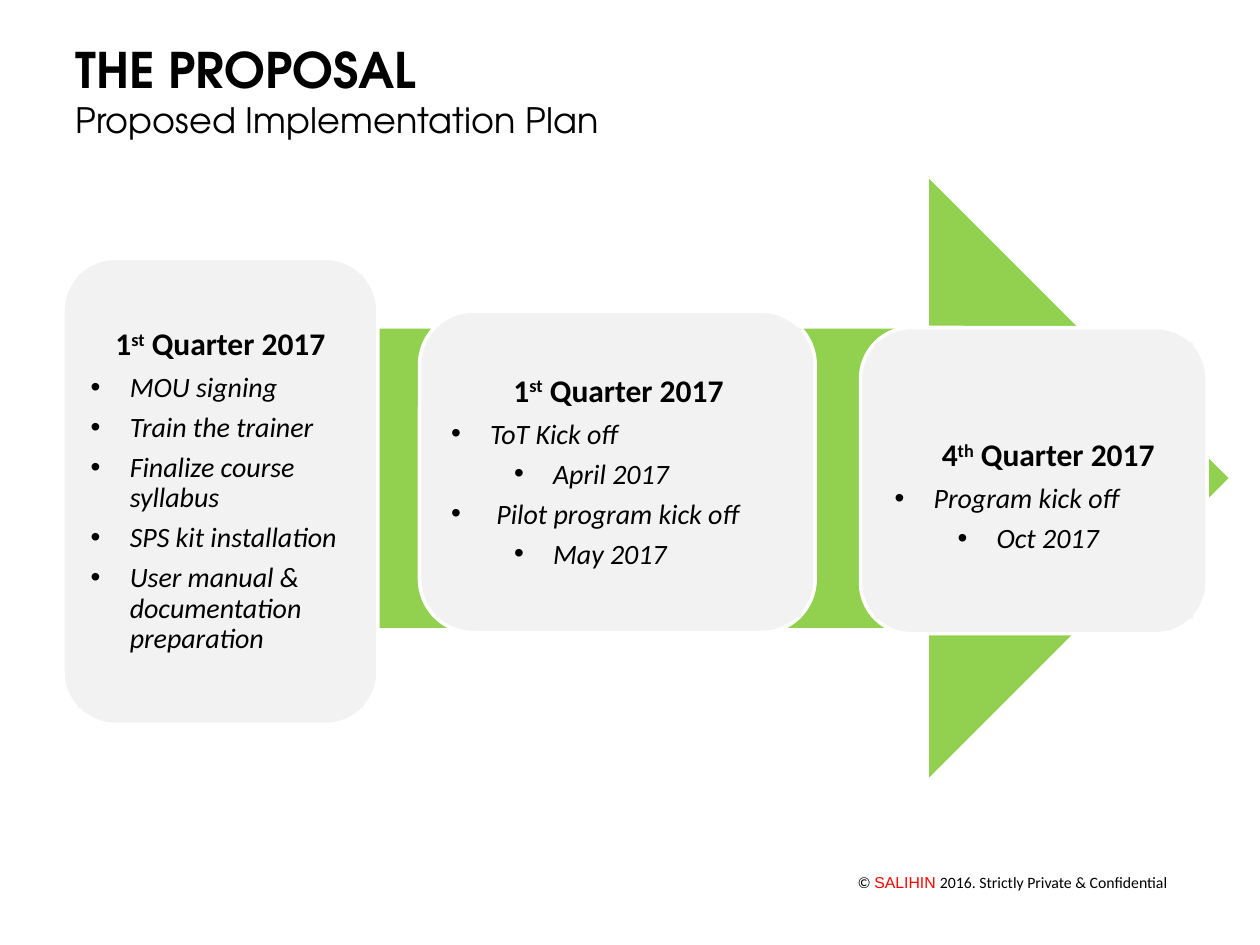
from lxml.etree import SubElement
from pptx import Presentation
from pptx.dml.color import RGBColor
from pptx.enum.shapes import MSO_SHAPE
from pptx.enum.text import MSO_ANCHOR, MSO_AUTO_SIZE, PP_ALIGN
from pptx.oxml.ns import qn
from pptx.util import Inches, Pt

BLACK = RGBColor(0x00, 0x00, 0x00)
RED = RGBColor(0xFF, 0x00, 0x00)
WHITE = RGBColor(0xFF, 0xFF, 0xFF)
GREEN = RGBColor(0x92, 0xD0, 0x50)
GREY = RGBColor(0xF2, 0xF2, 0xF2)
HEADING_FONT = "TeX Gyre Adventor"
BODY_FONT = "Calibri"


class PlanSlide:
    """Draws the elements of the implementation plan in one style."""

    def __init__(self, slide):
        self.slide = slide

    def style(self, font, size, name=BODY_FONT, bold=False, italic=False, color=BLACK):
        font.name, font.size, font.bold, font.italic = name, Pt(size), bold, italic
        font.color.rgb = color

    def placeholder(self, idx, box, anchor=MSO_ANCHOR.TOP, margin=None):
        holder = self.slide.placeholders[idx]
        holder.left, holder.top, holder.width, holder.height = map(Inches, box)
        frame = holder.text_frame
        frame.auto_size, frame.word_wrap = MSO_AUTO_SIZE.NONE, True
        frame.vertical_anchor = anchor
        if margin:
            frame.margin_left = frame.margin_right = Inches(margin)
            frame.margin_top = frame.margin_bottom = Inches(margin)
        self.slide.shapes._spTree.append(holder._element)
        return holder

    def set_bullet(self, paragraph, indent=0, hanging=0, mark=None):
        properties = paragraph._p.get_or_add_pPr()
        properties.set("marL", str(Inches(indent)))
        properties.set("indent", str(-Inches(hanging)))
        if mark:
            SubElement(properties, qn("a:buFont"), typeface="Arial")
            SubElement(properties, qn("a:buChar"), char=mark)
        else:
            SubElement(properties, qn("a:buNone"))

    def space(self, paragraph, size):
        paragraph.line_spacing = 0.9
        paragraph.space_before = Pt(0)
        paragraph.space_after = Pt(round(size * 0.35, 1))

    def heading(self, idx, box, text, size, bold=False):
        paragraph = self.placeholder(idx, box).text_frame.paragraphs[0]
        paragraph.text = text
        self.set_bullet(paragraph)
        paragraph.alignment = PP_ALIGN.LEFT
        paragraph.space_before = Pt(0)
        self.style(paragraph.font, size, HEADING_FONT, bold)

    def shape(self, preset, box, fill, line=None):
        shape = self.slide.shapes.add_shape(preset, *map(Inches, box))
        shape.shadow.inherit = False
        shape.fill.solid()
        shape.fill.fore_color.rgb = fill
        if line is None:
            shape.line.fill.background()
        else:
            shape.line.color.rgb = line
            shape.line.width = Pt(2)

    def card(self, box):
        self.shape(MSO_SHAPE.ROUNDED_RECTANGLE, box, GREY, WHITE)

    def milestones(self, idx, box, quarter, items, anchor=MSO_ANCHOR.MIDDLE,
                   margin=None, fill=None):
        holder = self.placeholder(idx, box, anchor, margin)
        if fill is not None:
            holder.fill.solid()
            holder.fill.fore_color.rgb = fill
        frame = holder.text_frame
        number, suffix = quarter
        title = frame.paragraphs[0]
        self.set_bullet(title)
        title.alignment = PP_ALIGN.CENTER
        self.space(title, 18)
        self.style(title.font, 18, bold=True)
        title.add_run().text = number
        ordinal = title.add_run()
        ordinal.text = suffix
        ordinal.font._element.set("baseline", "30000")
        title.add_run().text = " Quarter 2017"
        for level, text in items:
            item = frame.add_paragraph()
            item.text, item.level = text, level
            self.set_bullet(item, 0.31 + 0.5 * level, 0.31, "•")
            item.alignment = PP_ALIGN.LEFT
            self.space(item, 16)
            self.style(item.font, 16, italic=True)

    def footer(self, box, parts):
        frame = self.slide.shapes.add_textbox(*map(Inches, box)).text_frame
        frame.word_wrap = True
        paragraph = frame.paragraphs[0]
        paragraph.alignment = PP_ALIGN.RIGHT
        for text, name, color in parts:
            run = paragraph.add_run()
            run.text = text
            self.style(run.font, 9, name, color=color)


def main():
    presentation = Presentation()
    presentation.slide_width, presentation.slide_height = Inches(10), Inches(7.5)
    plan = PlanSlide(presentation.slides.add_slide(presentation.slide_layouts[4]))

    plan.footer((6.67, 6.88, 2.69, 0.25), [
        ("© ", BODY_FONT, BLACK),
        ("SALIHIN ", "Arial", RED),
        ("2016. Strictly Private & Confidential", BODY_FONT, BLACK),
    ])
    plan.heading(0, (0.5, 0.26, 4.42, 0.57), "THE PROPOSAL", 28, bold=True)
    plan.heading(1, (0.5, 0.73, 6.75, 0.44), "Proposed Implementation Plan", 20)
    plan.shape(MSO_SHAPE.RIGHT_ARROW, (0.54, 1.42, 9.21, 4.75), GREEN)

    plan.card((0.5, 2.05, 2.5, 3.7))
    plan.milestones(2, (0.62, 2.18, 2.26, 3.44), ("1", "st"), [
        (0, "MOU signing"),
        (0, "Train the trainer"),
        (0, "Finalize course syllabus"),
        (0, "SPS kit installation"),
        (0, "User manual & documentation preparation"),
    ], margin=0.1, fill=GREY)

    plan.card((3.33, 2.47, 3.14, 2.55))
    plan.milestones(4, (3.46, 2.6, 2.9, 2.3), ("1", "st"), [
        (0, "ToT Kick off"),
        (1, "April 2017"),
        (0, " Pilot program kick off"),
        (1, "May 2017"),
    ], margin=0.12, fill=GREY)

    plan.card((6.83, 2.6, 2.75, 2.43))
    plan.shape(MSO_SHAPE.RECTANGLE, (6.94, 2.72, 2.53, 2.19), GREY)
    plan.milestones(3, (7, 3.44, 2.64, 1.06), ("4", "th"), [
        (0, "Program kick off"),
        (1, "Oct 2017"),
    ], anchor=MSO_ANCHOR.TOP)

    presentation.save("out.pptx")


if __name__ == "__main__":
    main()
